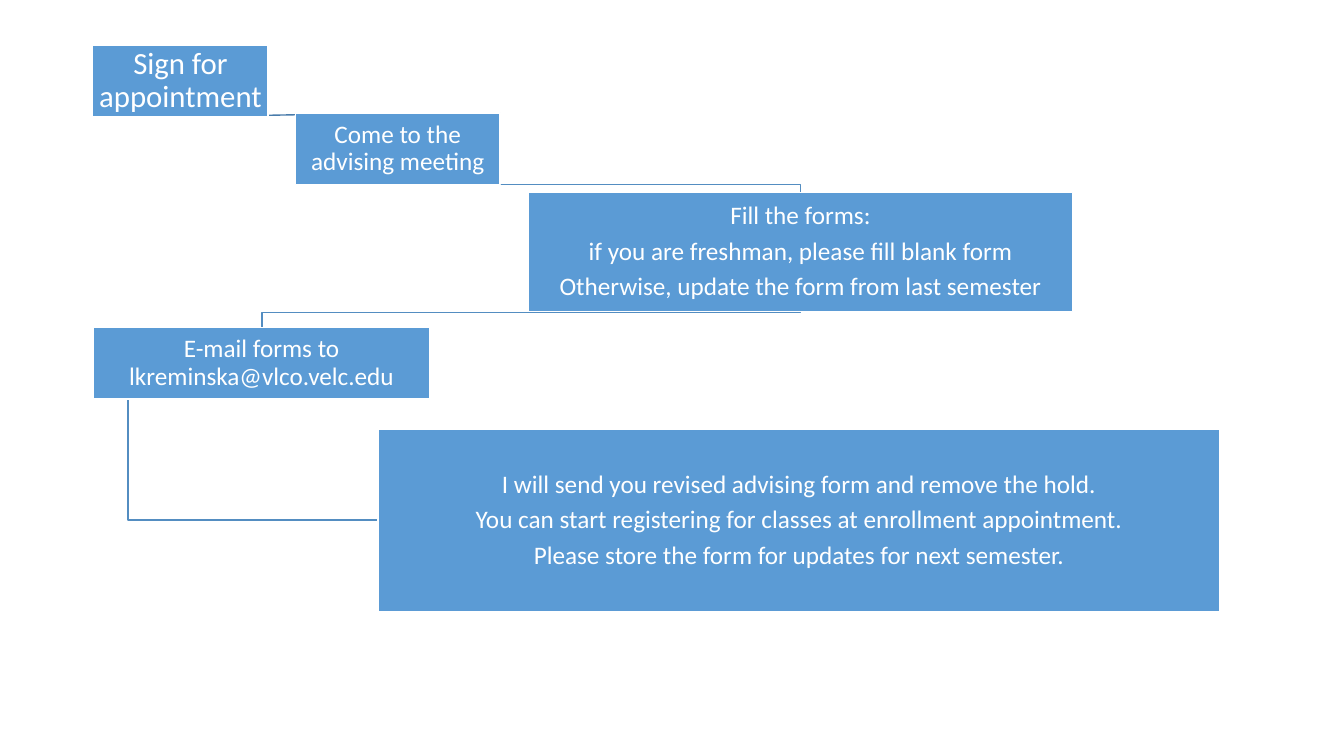
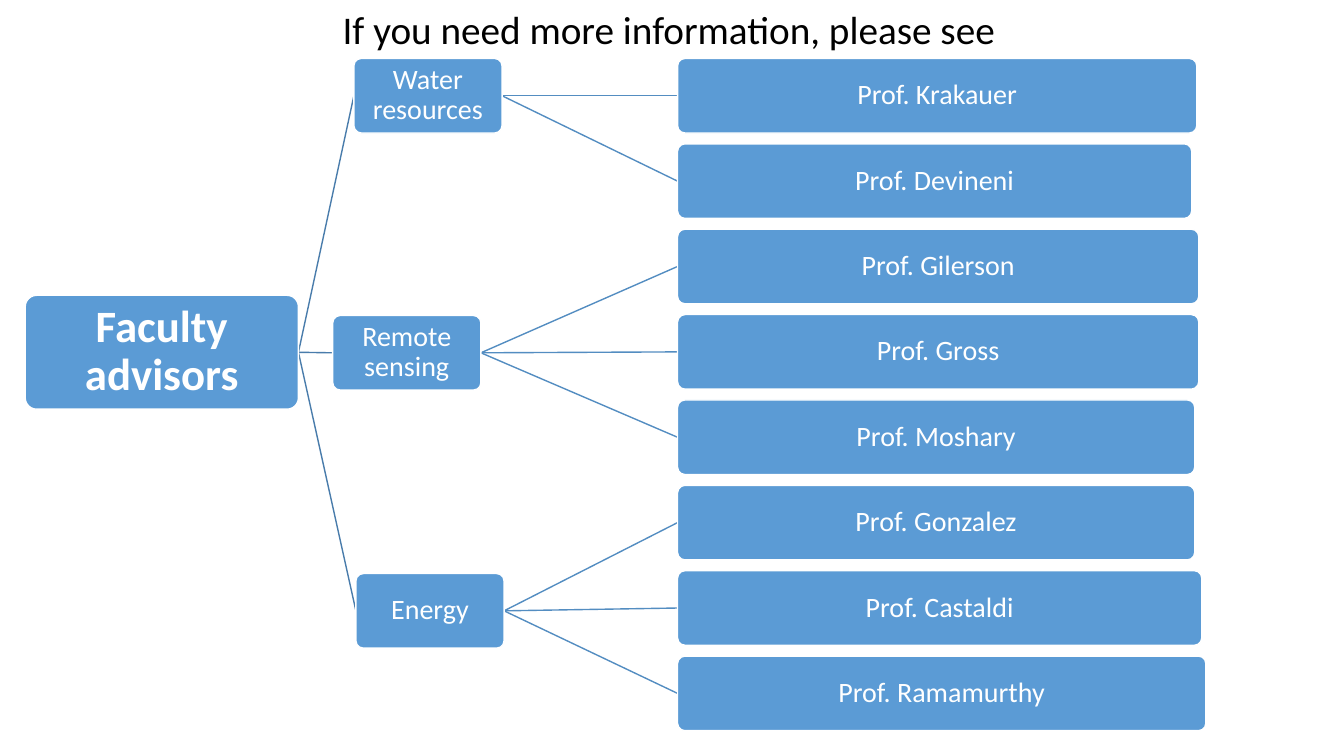
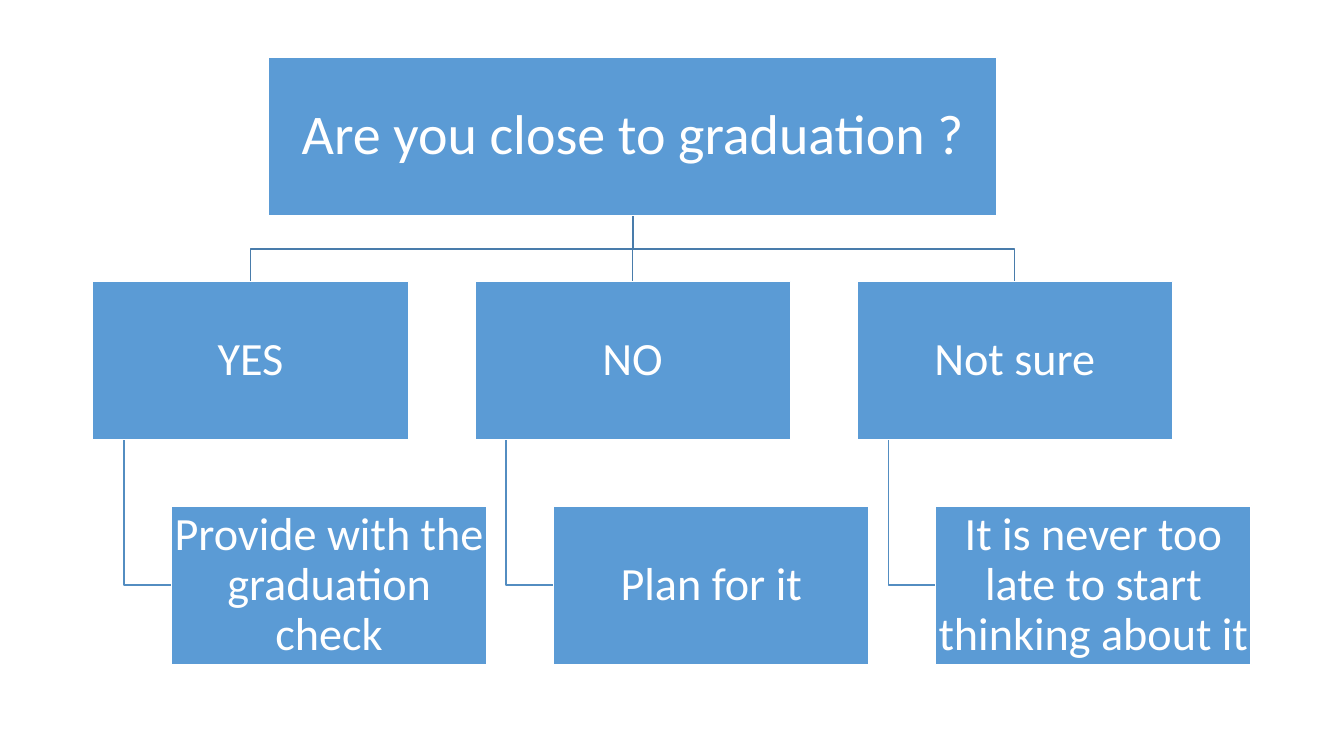
"""Draw three advising diagrams: steps, faculty tree and graduation choices."""
from itertools import count

from lxml import etree
from pptx import Presentation
from pptx import util as u
from pptx.dml.color import RGBColor
from pptx.enum import shapes, text
from pptx.oxml.ns import qn

HUES = {"box": "5B9BD5", "edge": "FFFFFF", "light": "FFFFFF", "dark": "000000",
        "trunk": "497CAB", "twig": "538DC1"}
FONT = "Calibri"


def hue(name):
    return RGBColor.from_string(HUES[name])


def write(frame, words, size=18, color="light", bold=False, inset=0.01,
          align=text.PP_ALIGN.CENTER, anchor=text.MSO_ANCHOR.MIDDLE,
          wrap=True, lead=0.9, after=0.35):
    frame.word_wrap = wrap
    frame.vertical_anchor = anchor
    frame.margin_left = frame.margin_right = u.Inches(inset)
    frame.margin_top = frame.margin_bottom = u.Inches(min(inset, 0.05))
    frame.text = words
    for para in frame.paragraphs:
        para.alignment = align
        para.line_spacing = lead
        para.space_after = u.Pt(int(size * after))
        font = para.runs[0].font
        font.name, font.size, font.bold = FONT, u.Pt(size), bold
        font.color.rgb = hue(color)


class Deck:
    def __init__(self):
        self.show = Presentation()
        self.show.slide_width = u.Inches(13.33)
        self.show.slide_height = u.Inches(7.5)
        self.items = None

    def page(self):
        self.items = self.show.slides.add_slide(self.show.slide_layouts[6]).shapes

    def box(self, x, y, w, h, words, kind="RECTANGLE", **style):
        shape = self.items.add_shape(shapes.MSO_SHAPE[kind], *map(u.Inches, (x, y, w, h)))
        if kind == "ROUNDED_RECTANGLE":
            shape.adjustments[0] = 0.1
        shape.shadow.inherit = False
        shape.fill.solid()
        shape.fill.fore_color.rgb = hue("box")
        self.stroke(shape, "edge")
        write(shape.text_frame, words, **style)
        return shape

    def label(self, x, y, w, h, words, **style):
        area = self.items.add_textbox(*map(u.Inches, (x, y, w, h)))
        write(area.text_frame, words, **style)

    def stroke(self, shape, color):
        shape.line.color.rgb = hue(color)
        shape.line.width = u.Pt(1)

    def lower(self, shape):
        shape.element.getparent().insert(2, shape.element)

    def link(self, start, side, end, port, color="twig"):
        line = self.items.add_connector(shapes.MSO_CONNECTOR.STRAIGHT, 0, 0, 0, 0)
        line.begin_connect(start, side)
        line.end_connect(end, port)
        self.stroke(line, color)
        etree.SubElement(line.element.spPr, qn("a:effectLst"))
        self.lower(line)

    def bend(self, *points, color="twig"):
        first, *rest = [tuple(map(u.Inches, point)) for point in points]
        pen = self.items.build_freeform(*first)
        pen.add_line_segments(rest, close=False)
        line = pen.convert_to_shape()
        line.fill.background()
        line.shadow.inherit = False
        self.stroke(line, color)
        self.lower(line)


def steps(deck):
    deck.page()
    sign = deck.box(0.92, 0.45, 1.74, 0.71, "Sign for appointment", size=22, inset=0.02)
    meet = deck.box(2.93, 1.12, 2.03, 0.71, "Come to the advising meeting")
    deck.box(5.24, 1.91, 5.4, 1.18,
             "Fill the forms:\n"
             "if you are freshman, please fill blank form\n"
             "Otherwise, update the form from last semester")
    deck.box(0.93, 3.25, 3.33, 0.71, "E-mail forms to lkreminska@vlco.velc.edu")
    deck.box(3.75, 4.26, 8.35, 1.81,
             "I will send you revised advising form and remove the hold.\n"
             "You can start registering for classes at enrollment appointment.\n"
             "Please store the form for updates for next semester.")
    deck.link(sign, 2, meet, 0, color="trunk")
    deck.bend((3.95, 1.83), (7.94, 1.83), (7.94, 1.91))
    deck.bend((7.94, 3.09), (7.94, 3.1), (2.6, 3.1), (2.6, 3.25))
    deck.bend((1.27, 3.96), (1.27, 5.16), (3.75, 5.16))


def tree(deck):
    deck.page()
    kind, high = "ROUNDED_RECTANGLE", 0.74
    fields = [
        (3.51, 0.58, "Water resources", [("Krakauer", 5.15), ("Devineni", 5.1)]),
        (3.3, 3.13, "Remote sensing",
         [("Gilerson", 5.17), ("Gross", 5.17), ("Moshary", 5.13)]),
        (3.53, 5.69, "Energy",
         [("Gonzalez", 5.13), ("Castaldi", 5.2), ("Ramamurthy", 5.24)]),
    ]
    root = deck.box(0.25, 2.93, 2.71, 1.13, "Faculty advisors", kind,
                    size=32, bold=True, inset=0.02)
    row = count()
    for x, y, topic, staff in fields:
        field = deck.box(x, y, 1.47, high, topic, kind, size=20)
        deck.link(root, 3, field, 1, color="trunk")
        for name, wide in staff:
            prof = deck.box(6.72, 0.58 + 0.847 * next(row), wide, high,
                            f"Prof. {name}", kind, size=20)
            deck.link(field, 3, prof, 1)
    deck.label(3.3, 0, 6.74, 0.57, "If you need more information, please see",
               size=28, color="dark", inset=0.1, wrap=False, lead=1, after=0,
               align=text.PP_ALIGN.LEFT, anchor=text.MSO_ANCHOR.TOP)


def choice(deck):
    deck.page()
    wide, high, top, low = 3.13, 1.57, 2.79, 5.02
    pairs = [("YES", "Provide with the graduation check"),
             ("NO", "Plan for it"),
             ("Not sure", "It is never too late to start thinking about it")]
    ask = deck.box(2.66, 0.57, 7.23, high, "Are you close to graduation ?",
                   size=40, inset=0.03)
    hub, foot, rail = 6.28, 0.57 + high, 2.47
    for col, (reply, hint) in enumerate(pairs):
        x = 0.92 + 3.79 * col
        mid, stem, tip = x + wide / 2, x + 0.31, x + 0.78
        node = deck.box(x, top, wide, high, reply, size=33, inset=0.02)
        deck.box(tip, low, wide, high, hint, size=33, inset=0.02)
        deck.bend((stem, top + high), (stem, low + high / 2), (tip, low + high / 2))
        if col == 1:
            deck.link(ask, 2, node, 0, color="trunk")
        else:
            deck.bend((hub, foot), (hub, rail), (mid, rail), (mid, top), color="trunk")


def main():
    deck = Deck()
    for draw in (steps, tree, choice):
        draw(deck)
    deck.show.save("out.pptx")


if __name__ == "__main__":
    main()
